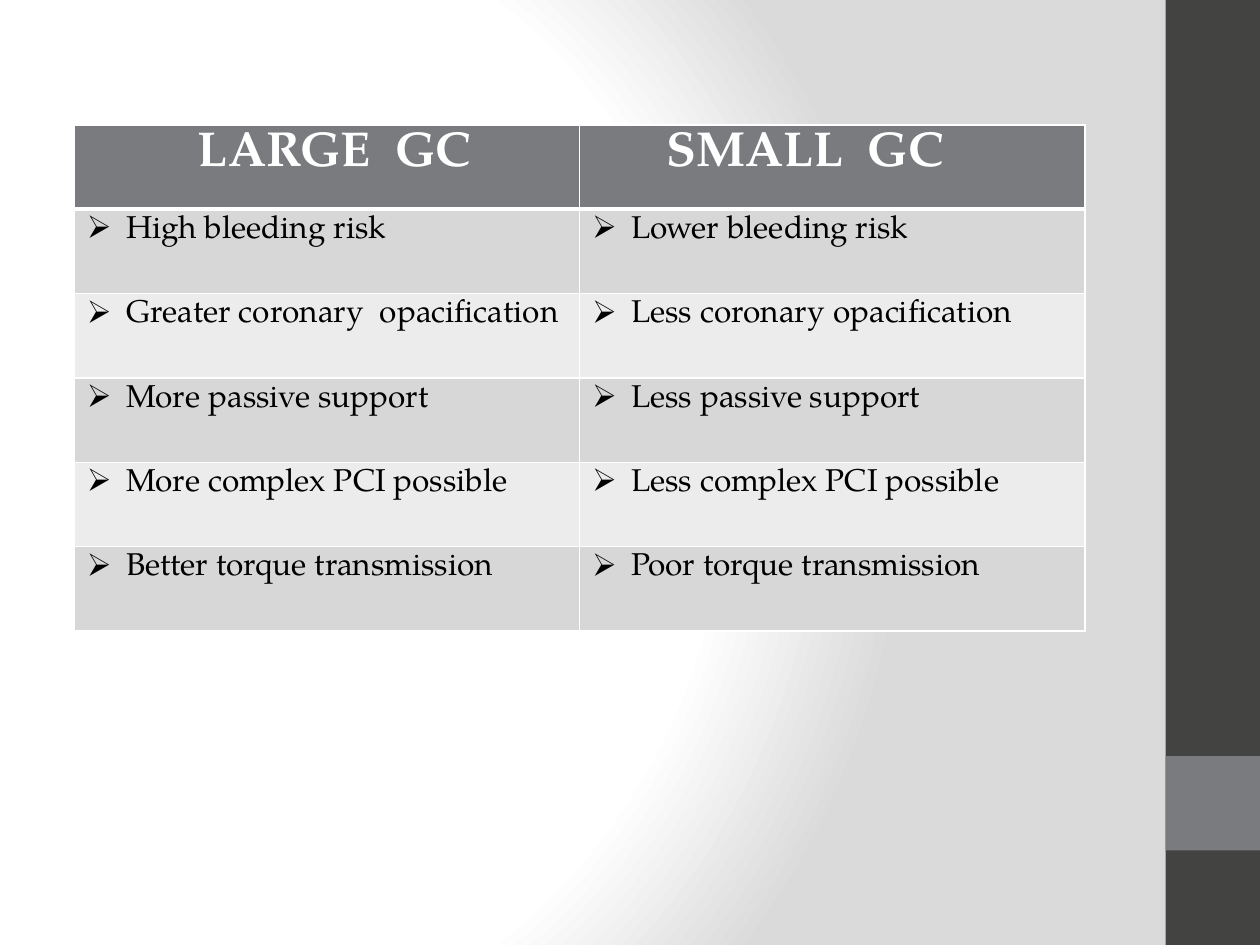
from lxml.etree import SubElement
from pptx import Presentation
from pptx.dml.color import RGBColor
from pptx.enum.shapes import MSO_SHAPE
from pptx.oxml import parse_xml
from pptx.oxml.ns import nsdecls, qn
from pptx.util import Inches, Pt

HEADERS = [("LARGE  GC", 0.88), ("SMALL  GC", 0.59)]
ROWS = [
    ("High bleeding risk", "Lower bleeding risk"),
    ("Greater coronary  opacification", "Less coronary opacification"),
    ("More passive support", "Less passive support"),
    ("More complex PCI possible", "Less complex PCI possible"),
    ("Better torque transmission", "Poor torque transmission"),
]
WIDTH, HEIGHT = 10, 7.5
SIDEBAR = 0.75
BARS = [(0, HEIGHT, "434342"), (6, SIDEBAR, "797B7E")]
LEFT, TOP, COLUMN, ROW = 0.59, 0.99, 4.01, 0.67
BANDS = ["D7D7D8", "ECECEC"]
STOPS = [(0, "FFFFFF"), (75, "FFFFFF"), (100, "DADADA")]
FOCUS = {"l": 20, "t": 50, "r": 100, "b": 50}
HEADER_FONT = {"name": "TeX Gyre Pagella", "size": Pt(28), "bold": True}
BODY_FONT = {"name": "TeX Gyre Pagella", "size": Pt(18), "bold": False}
BULLET_INDENT = 0.31


def color(value):
    return RGBColor.from_string(value)


def paint(item, value):
    item.fill.solid()
    item.fill.fore_color.rgb = color(value)


def set_background(page):
    stops = "".join(
        f'<a:gs pos="{place * 1000}"><a:srgbClr val="{value}"/></a:gs>'
        for place, value in STOPS)
    focus = " ".join(f'{side}="{share * 1000}"' for side, share in FOCUS.items())
    background = parse_xml(
        f'<p:bg {nsdecls("p", "a")}><p:bgPr><a:gradFill rotWithShape="1">'
        f'<a:gsLst>{stops}</a:gsLst><a:path path="circle">'
        f'<a:fillToRect {focus}/></a:path></a:gradFill>'
        '<a:effectLst/></p:bgPr></p:bg>')
    page.element.cSld.insert(0, background)


def add_bar(page, top, height, fill):
    bar = page.shapes.add_shape(
        MSO_SHAPE.RECTANGLE, Inches(WIDTH - SIDEBAR), Inches(top),
        Inches(SIDEBAR), Inches(height))
    bar.shadow.inherit = False
    bar.line.fill.background()
    paint(bar, fill)


def set_borders(cell, bottom):
    properties = cell._tc.get_or_add_tcPr()
    widths = {"lnL": 1, "lnR": 1, "lnT": 1, "lnB": bottom}
    for position, (side, width) in enumerate(widths.items()):
        properties.insert(position, parse_xml(
            f'<a:{side} {nsdecls("a")} w="{Pt(width)}"><a:solidFill>'
            f'<a:srgbClr val="FFFFFF"/></a:solidFill></a:{side}>'))


def fill_cell(cell, text, font, ink, fill, indent, bullet=None, bottom=1):
    paint(cell, fill)
    set_borders(cell, bottom)
    para = cell.text_frame.paragraphs[0]
    properties = para._p.get_or_add_pPr()
    properties.set("marL", str(Inches(indent)))
    if bullet:
        properties.set("indent", str(-Inches(indent)))
        SubElement(properties, qn("a:buChar")).set("char", bullet)
    span = para.add_run()
    span.text = text
    for name, value in font.items():
        setattr(span.font, name, value)
    span.font.color.rgb = color(ink)


def add_comparison(page):
    count = len(ROWS) + 1
    table = page.shapes.add_table(
        count, len(HEADERS), Inches(LEFT), Inches(TOP),
        Inches(COLUMN * len(HEADERS)), Inches(ROW * count)).table
    for column in table.columns:
        column.width = Inches(COLUMN)
    for row in table.rows:
        row.height = Inches(ROW)
    for column, (text, indent) in enumerate(HEADERS):
        fill_cell(table.cell(0, column), text, HEADER_FONT, "FFFFFF",
                  "797B7E", indent, bottom=3)
    for number, texts in enumerate(ROWS):
        for column, text in enumerate(texts):
            fill_cell(table.cell(number + 1, column), text, BODY_FONT, "000000",
                      BANDS[number % 2], BULLET_INDENT, bullet="➢")


def main():
    deck = Presentation()
    deck.slide_width, deck.slide_height = Inches(WIDTH), Inches(HEIGHT)
    page = deck.slides.add_slide(deck.slide_layouts[6])
    set_background(page)
    for bar in BARS:
        add_bar(page, *bar)
    add_comparison(page)
    deck.save("out.pptx")


if __name__ == "__main__":
    main()
